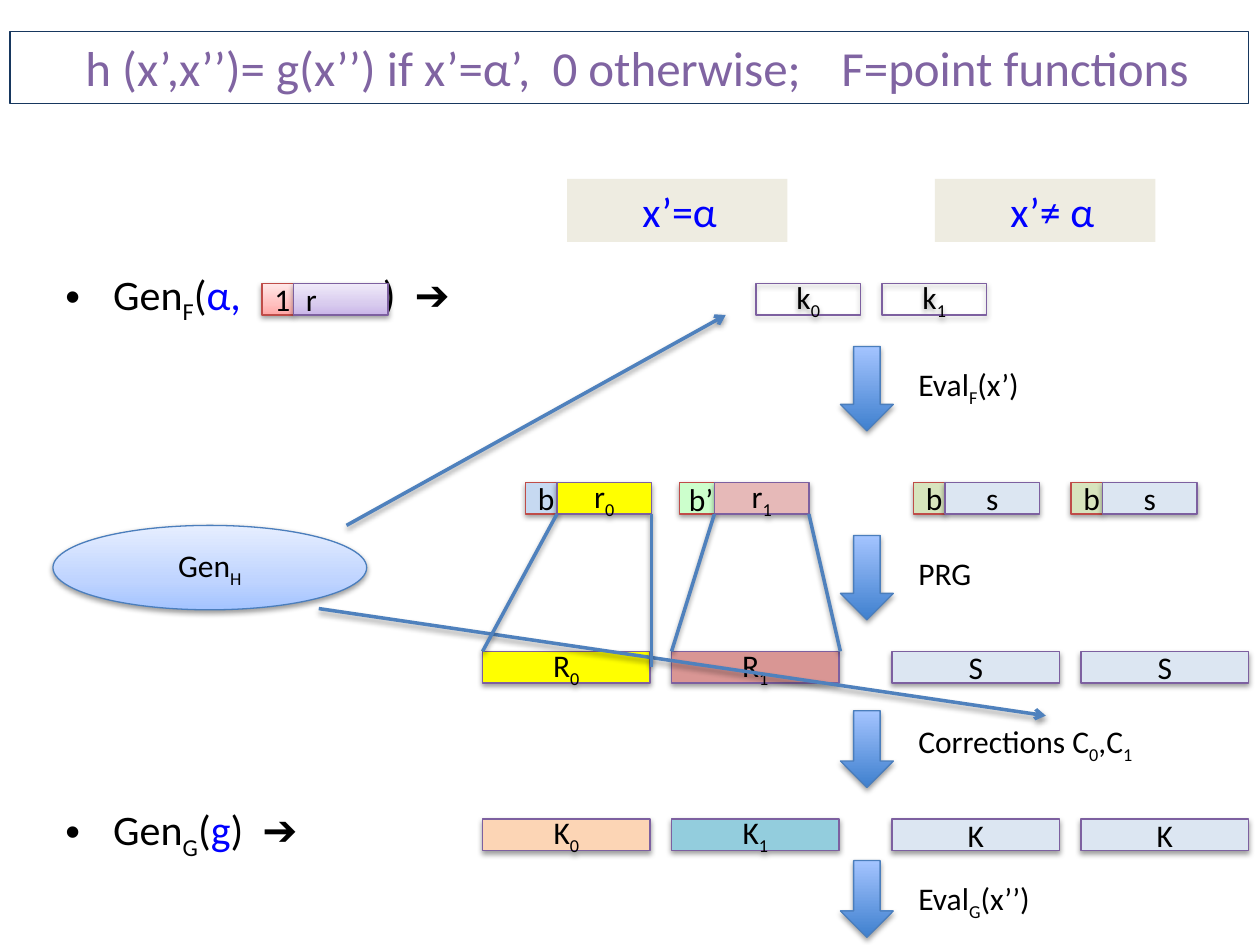
import pptx
import pptx.dml.color
import pptx.enum.shapes
import pptx.enum.text
import pptx.oxml
import pptx.oxml.ns
import pptx.util
from lxml import etree
from pptx.util import Inches

Shapes = pptx.enum.shapes.MSO_SHAPE
Align = pptx.enum.text.PP_ALIGN
qn = pptx.oxml.ns.qn

BLACK, BLUE, PURPLE, RED = "000000", "0000FF", "7D60A0", "BF4C48"
ARROW_EDGE, PALE, GREEN, YELLOW = "4B7EBC", "DCE6F2", "D7E4BD", "FFFF00"
RED_FADE = [(0, "FFA6A5"), (35, "FFC0BF"), (100, "FFE7E7")]
PURPLE_FADE = [(0, "C9B5E8"), (35, "D8CBEE"), (100, "F0EAF9")]
BLUE_FADE = [(0, "A4C4FF"), (35, "BFD4FF"), (100, "E6EEFF")]
ARROW_FADE = [(0, "3F80CE"), (100, "A4C4FF")]


def color(value):
    return pptx.dml.color.RGBColor.from_string(value)


def add_xml(parent, tag, **attributes):
    return etree.SubElement(parent, qn(tag), attributes)


class Diagram:
    """Style and current slide; text parts starting with _ are subscripts, with * blue."""

    font = "Calibri"

    def __init__(self, slide):
        self.slide = slide

    def set_text(self, shape, parts, size=18, text_color=BLACK, align=None, wrap=True):
        frame = shape.text_frame
        frame.word_wrap = wrap
        paragraph = frame.paragraphs[0]
        paragraph.alignment = align
        paragraph.font.name = self.font
        paragraph.font.size = pptx.util.Pt(size)
        paragraph.font.color.rgb = color(text_color)
        for part in parts:
            run = paragraph.add_run()
            run.text = part.lstrip("_*")
            if part.startswith("_"):
                run._r.get_or_add_rPr().set("baseline", "-25000")
            elif part.startswith("*"):
                run.font.color.rgb = color(BLUE)
        return paragraph

    def indent(self, paragraph, left, first=0, tab=None):
        properties = paragraph._p.get_or_add_pPr()
        properties.set("marL", str(Inches(left)))
        properties.set("indent", str(Inches(first)))
        # Bullet and tab elements must precede the default run properties
        defaults = properties.find(qn("a:defRPr"))
        if first:
            add_xml(properties, "a:buFont", typeface="Arial")
            add_xml(properties, "a:buChar", char="•")
        if tab:
            tabs = add_xml(properties, "a:tabLst")
            add_xml(tabs, "a:tab", pos=str(Inches(tab)), algn="l")
        properties.append(defaults)

    def shadow(self, shape):
        effects = add_xml(shape._element.spPr, "a:effectLst")
        outer = add_xml(effects, "a:outerShdw", blurRad="40000", dist="20000",
                        dir="5400000", rotWithShape="0")
        add_xml(add_xml(outer, "a:srgbClr", val=BLACK), "a:alpha", val="38000")

    def fill(self, shape, fill):
        if fill is None:
            shape.fill.background()
        elif isinstance(fill, str):
            shape.fill.solid()
            shape.fill.fore_color.rgb = color(fill)
        else:
            shape.fill.gradient()
            shape.fill.gradient_angle = 90
            stops = shape._element.spPr.find(".//" + qn("a:gsLst"))
            for stop in list(stops):
                stops.remove(stop)
            for position, value in fill:
                stop = add_xml(stops, "a:gs", pos=str(position * 1000))
                add_xml(stop, "a:srgbClr", val=value)

    def shape(self, kind, left, top, width, height, fill, edge, shadow=True):
        shape = self.slide.shapes.add_shape(
            kind, Inches(left), Inches(top), Inches(width), Inches(height))
        self.fill(shape, fill)
        if edge:
            shape.line.color.rgb = color(edge)
            shape.line.width = pptx.util.Pt(0.75)
        else:
            shape.line.fill.background()
        if shadow:
            self.shadow(shape)
        else:
            shape.shadow.inherit = False
        return shape

    def box(self, left, top, width, fill, parts, edge=PURPLE, align=Align.CENTER):
        shape = self.shape(Shapes.RECTANGLE, left, top, width, 0.25, fill, edge)
        self.set_text(shape, parts, align=align)

    def bit(self, left, top, fill, text, width=0.25):
        self.box(left, top, width, fill, [text] if text else [], RED, Align.JUSTIFY)

    def banner(self, left, top, width, height, text, size, text_color,
               fill=None, edge=None, tab=None):
        shape = self.shape(Shapes.RECTANGLE, left, top, width, height, fill, edge, False)
        shape.text_frame.vertical_anchor = pptx.enum.text.MSO_ANCHOR.TOP
        paragraph = self.set_text(shape, [text], size, text_color, Align.LEFT)
        self.indent(paragraph, 0.5, tab=tab)

    def label(self, left, top, width, parts, wrap=False):
        text_box = self.slide.shapes.add_textbox(
            Inches(left), Inches(top), Inches(width), Inches(0.4))
        self.set_text(text_box, parts, wrap=wrap)

    def bullet(self, top, parts, tab=None):
        text_box = self.slide.shapes.add_textbox(
            Inches(0.42), Inches(top), Inches(3.75), Inches(0.58))
        paragraph = self.set_text(text_box, parts, size=24)
        paragraph.space_before = pptx.util.Pt(4.8)
        self.indent(paragraph, 0.38, -0.38, tab)

    def step(self, top, height, label_top, width, parts, wrap=False):
        self.shape(Shapes.DOWN_ARROW, 6.67, top, 0.42, height, ARROW_FADE, ARROW_EDGE)
        self.label(7.19, label_top, width, parts, wrap)

    def line(self, start, end, arrow=False):
        connector = self.slide.shapes.add_connector(
            pptx.enum.shapes.MSO_CONNECTOR.STRAIGHT, *map(Inches, start + end))
        connector.line.color.rgb = color("4F81BD")
        connector.line.width = pptx.util.Pt(2)
        if arrow:
            add_xml(connector._element.spPr.find(qn("a:ln")), "a:tailEnd", type="arrow")
        self.shadow(connector)


def main():
    presentation = pptx.Presentation()
    presentation.slide_width = Inches(10)
    presentation.slide_height = Inches(7.5)
    diagram = Diagram(presentation.slides.add_slide(presentation.slide_layouts[6]))

    # Title and case headings
    diagram.banner(0.08, 0.25, 9.83, 0.57,
                   "h (x’,x’’)= g(x’’) if x’=α’,  0 otherwise;\tF=point functions",
                   28, "8064A2", edge="17375E", tab=6.67)
    for left, text in [(4.5, "x’=α"), (7.42, "x’≠ α")]:
        diagram.banner(left, 1.42, 1.75, 0.5, text, 24, BLUE, fill="EEECE1")

    # Key generation for F
    diagram.bullet(2.08, ["Gen", "_F", "(", "*α,", "\t)  ➔"], tab=2.52)
    diagram.bit(2.08, 2.25, RED_FADE, "1")
    diagram.box(2.33, 2.25, 0.75, PURPLE_FADE, ["r"], align=Align.JUSTIFY)
    for index in range(2):
        diagram.box(6 + index, 2.25, 0.83, None, ["k", f"_{index}"])

    # Steps between rows
    diagram.step(2.75, 0.67, 2.85, 1.06, ["Eval", "_F", "(x’)"])
    diagram.step(4.25, 0.67, 4.35, 0.63, ["PRG"])
    diagram.step(5.64, 0.61, 5.68, 2.23, ["Corrections C", "_0", ",C", "_1"], True)
    diagram.step(6.83, 0.61, 6.93, 2.23, ["Eval", "_G", "(x’’)"], True)

    # Evaluated bits and seeds
    seeds = [(4.17, 0.25, "C6D9F1", "b", YELLOW, ["r", "_0"]),
             (5.39, 0.28, "CCFFCC", "", "E6B9B8", ["r", "_1"]),
             (7.25, 0.25, GREEN, "b", PALE, ["s"]),
             (8.5, 0.25, GREEN, "b", PALE, ["s"])]
    for left, width, bit_fill, bit, seed_fill, seed in seeds:
        diagram.bit(left, 3.83, bit_fill, bit, width)
        diagram.box(left + width, 3.83, 0.75, seed_fill, seed)
    diagram.label(5.37, 3.76, 0.4, ["b’"])

    # Expanded seeds and keys for G
    diagram.bullet(6.33, ["Gen", "_G", "(", "*g", ")  ➔"])
    rows = [(5.17, "R", "S", (YELLOW, "D99694")), (6.5, "K", "K", ("FCD5B5", "93CDDD"))]
    for top, special, common, fills in rows:
        for index, fill in enumerate(fills):
            diagram.box(3.83 + 1.5 * index, top, 1.33, fill, [special, f"_{index}"])
            diagram.box(7.08 + 1.5 * index, top, 1.33, PALE, [common])

    # Generator for H and its outputs
    ellipse = diagram.shape(Shapes.OVAL, 0.42, 4.17, 2.49, 0.67, BLUE_FADE, ARROW_EDGE)
    diagram.set_text(ellipse, ["Gen", "_H"], align=Align.CENTER)
    diagram.line((2.75, 4.17), (5.76, 2.5), arrow=True)
    diagram.line((2.53, 4.83), (8.3, 5.68), arrow=True)

    # Seed expansion lines
    for start, end in [(4.42, (3.83, 5.17)), (5.17, (5.17, 5.29)),
                       (5.67, (5.33, 5.17)), (6.42, (6.67, 5.17))]:
        diagram.line((start, 4.08), end)

    presentation.save("out.pptx")


if __name__ == "__main__":
    main()
